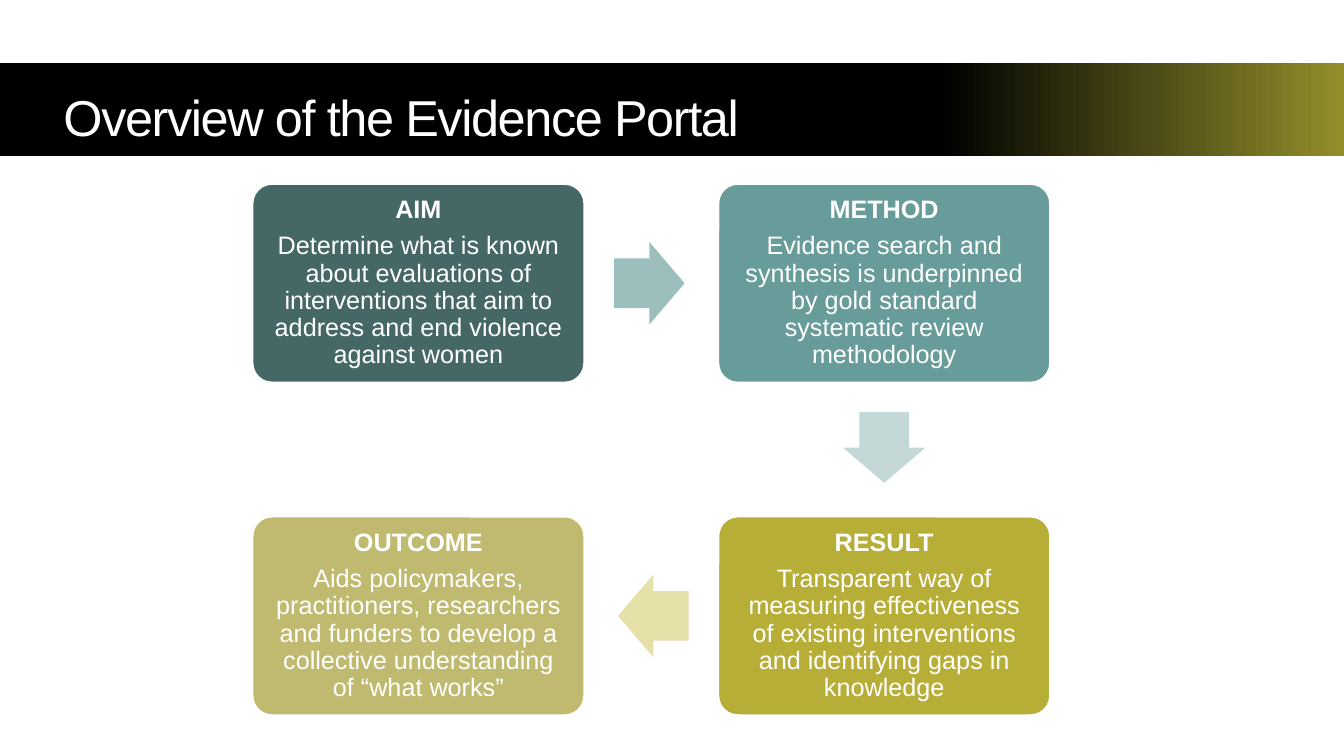
from dataclasses import dataclass

from pptx import Presentation
from pptx.dml.color import RGBColor
from pptx.enum.shapes import MSO_SHAPE as Shape
from pptx.enum.text import MSO_ANCHOR as Anchor, PP_ALIGN as Align
from pptx.util import Inches, Pt


@dataclass(frozen=True)
class Theme:
    font: str = "Arial"
    title_size: float = 36
    body_size: float = 18
    white: str = "FFFFFF"
    band_start: str = "000000"
    band_end: str = "928F2B"
    aim: str = "456867"
    method: str = "689C9A"
    result: str = "B7AE38"
    outcome: str = "C0BA71"
    to_method: str = "9CBEBD"
    to_result: str = "C4D8D7"
    to_outcome: str = "E4E0A7"


theme = Theme()


def add_block(page, kind, left, top, width, height, fill=None):
    """Add a shadowless, borderless shape, measured in inches."""
    block = page.shapes.add_shape(
        kind, Inches(left), Inches(top), Inches(width), Inches(height))
    block.shadow.inherit = False
    block.line.fill.background()
    if fill:
        block.fill.solid()
        block.fill.fore_color.rgb = RGBColor.from_string(fill)
    return block


def write(box, lines, size, insets, align=Align.LEFT, anchor=Anchor.MIDDLE,
          line_spacing=None, space_after=None, tracking=None):
    """Fill a box with (text, bold) lines; insets run left, top, right, bottom."""
    frame = box.text_frame
    frame.word_wrap = True
    frame.vertical_anchor = anchor
    (frame.margin_left, frame.margin_top,
     frame.margin_right, frame.margin_bottom) = map(Inches, insets)
    for index, (text, bold) in enumerate(lines):
        para = frame.add_paragraph() if index else frame.paragraphs[0]
        para.alignment = align
        para.line_spacing = line_spacing
        para.space_after = space_after
        span = para.add_run()
        span.text = text
        span.font.name = theme.font
        span.font.size = Pt(size)
        span.font.bold = bold
        span.font.color.rgb = RGBColor.from_string(theme.white)
        if tracking is not None:
            span.font._element.set("spc", str(tracking))


deck = Presentation()
deck.slide_width, deck.slide_height = Inches(13.33), Inches(7.5)
page = deck.slides.add_slide(deck.slide_layouts[6])

# Title band
band = add_block(page, Shape.RECTANGLE, 0, 0.63, 13.33, 0.92)
band.fill.gradient()
band.fill.gradient_angle = 0
band_stops = ((0.7, theme.band_start), (1, theme.band_end))
for stop, (position, color) in zip(band.fill.gradient_stops, band_stops):
    stop.position = position
    stop.color.rgb = RGBColor.from_string(color)
write(band, [("Overview of the Evidence Portal", False)], theme.title_size,
      (0.63, 0.2, 0.1, 0.1), anchor=Anchor.BOTTOM, tracking=-100)

# Four steps on a two by two grid, read clockwise
GRID_LEFT, GRID_TOP = 2.5, 1.82
COLUMN_STEP, ROW_STEP = 4.62, 3.3
CARD_WIDTH, CARD_HEIGHT = 3.3, 1.98
steps = [
    (0, 0, theme.aim, "AIM",
     "Determine what is known about evaluations of interventions that aim to "
     "address and end violence against women"),
    (1, 0, theme.method, "METHOD",
     "Evidence search and synthesis is underpinned by gold standard "
     "systematic review methodology"),
    (1, 1, theme.result, "RESULT",
     "Transparent way of measuring effectiveness of existing interventions "
     "and identifying gaps in knowledge"),
    (0, 1, theme.outcome, "OUTCOME",
     "Aids policymakers, practitioners, researchers and funders to develop a "
     "collective understanding of “what works”"),
]
for column, row, color, heading, detail in steps:
    card = add_block(page, Shape.ROUNDED_RECTANGLE,
                     GRID_LEFT + column * COLUMN_STEP, GRID_TOP + row * ROW_STEP,
                     CARD_WIDTH, CARD_HEIGHT, color)
    card.adjustments[0] = 0.1
    card.line.color.rgb = RGBColor.from_string(theme.white)
    card.line.width = Pt(2)
    write(card, [(heading, True), (detail, False)], theme.body_size, (0.13,) * 4,
          align=Align.CENTER, line_spacing=0.9, space_after=Pt(6.3))

# Arrows between the steps
arrows = [
    (6.09, 2.4, 0, theme.to_method),
    (8.42, 4.03, 90, theme.to_result),
    (6.13, 5.7, 180, theme.to_outcome),
]
for left, top, rotation, color in arrows:
    arrow = add_block(page, Shape.RIGHT_ARROW, left, top, 0.7, 0.82, color)
    arrow.rotation = rotation
    arrow.adjustments[0] = 0.6
    arrow.adjustments[1] = 0.5

deck.save("out.pptx")
